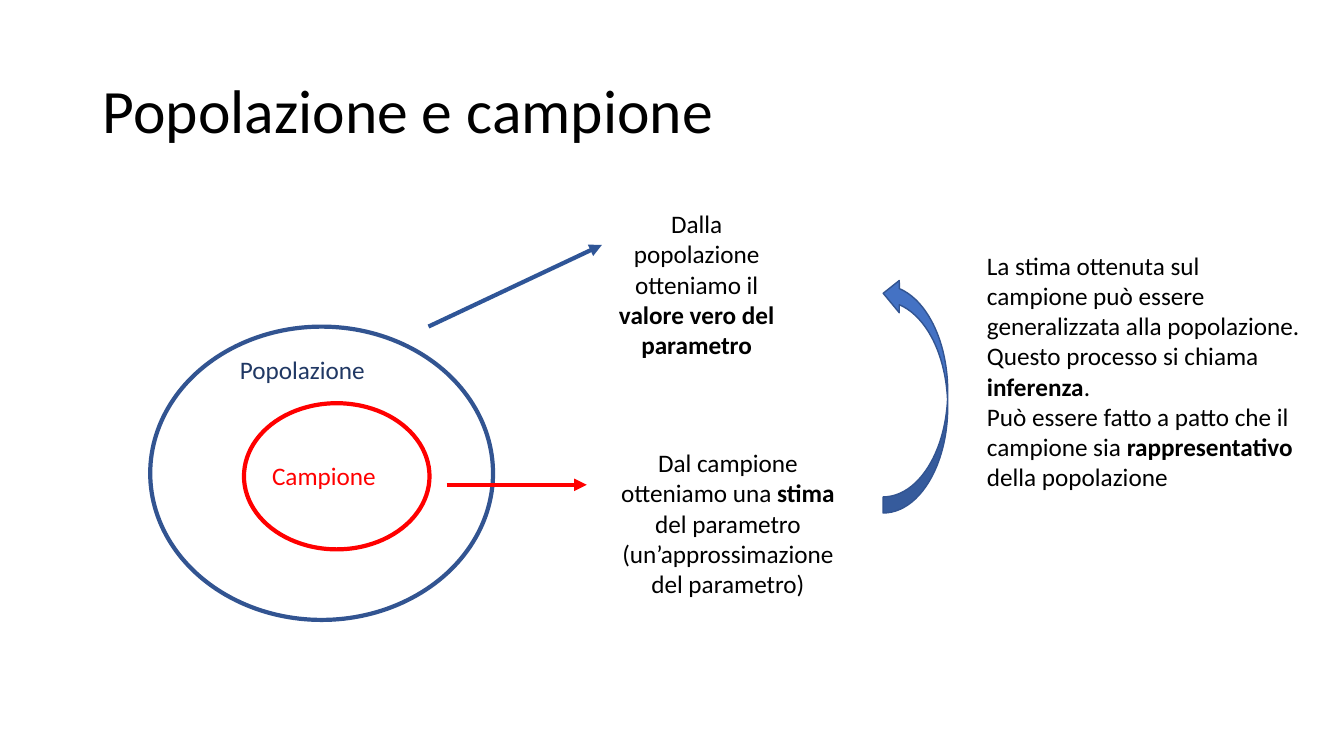
import pptx
import pptx.util
import pptx.dml.color
import pptx.enum.shapes
import pptx.enum.text
import pptx.oxml.ns
from dataclasses import dataclass
from lxml import etree
from pptx.util import Inches

SHAPE = pptx.enum.shapes.MSO_SHAPE
ALIGN = pptx.enum.text.PP_ALIGN
ANCHOR = pptx.enum.text.MSO_ANCHOR


@dataclass(frozen=True)
class Theme:
    font: str = "Calibri"
    title_size: int = 44
    body_size: int = 18
    text: str = "000000"
    population: str = "325491"
    population_text: str = "203864"
    population_arrow: str = "2F5597"
    sample: str = "FF0000"
    inference: str = "4472C4"
    line: float = 3
    thin_line: float = 1


THEME = Theme()


def rgb(value):
    return pptx.dml.color.RGBColor.from_string(value)


def add_text(slide, box, paragraphs, size=THEME.body_size, color=THEME.text,
             align=ALIGN.LEFT, anchor=ANCHOR.TOP, spacing=1.0):
    """Each paragraph is a list of (text, bold) runs."""
    tf = slide.shapes.add_textbox(*map(Inches, box)).text_frame
    tf.word_wrap = True
    tf.vertical_anchor = anchor
    for i, runs in enumerate(paragraphs):
        p = tf.add_paragraph() if i else tf.paragraphs[0]
        p.alignment = align
        p.line_spacing = spacing
        for text, bold in runs:
            r = p.add_run()
            r.text = text
            r.font.name = THEME.font
            r.font.size = pptx.util.Pt(size)
            r.font.bold = bold
            r.font.color.rgb = rgb(color)


def add_outlined(slide, kind, box, line, width, fill=None):
    sp = slide.shapes.add_shape(kind, *map(Inches, box))
    sp.shadow.inherit = False
    if fill:
        sp.fill.solid()
        sp.fill.fore_color.rgb = rgb(fill)
    else:
        sp.fill.background()
    sp.line.color.rgb = rgb(line)
    sp.line.width = pptx.util.Pt(width)
    return sp


def add_arrow(slide, start, end, color):
    cxn = slide.shapes.add_connector(
        pptx.enum.shapes.MSO_CONNECTOR.STRAIGHT, *map(Inches, start + end))
    cxn.line.color.rgb = rgb(color)
    cxn.line.width = pptx.util.Pt(THEME.line)
    qn = pptx.oxml.ns.qn
    etree.SubElement(cxn.line._get_or_add_ln(), qn("a:tailEnd"), type="triangle")
    etree.SubElement(cxn._element.spPr, qn("a:effectLst"))


def add_title(slide, box):
    add_text(slide, box, [[("Popolazione e campione", False)]],
             size=THEME.title_size, anchor=ANCHOR.MIDDLE, spacing=0.9)


def add_sets(slide, box):
    """Sample ellipse inside the population ellipse, with labels and arrows."""
    x, y, w, h = box
    label_w, label_h = 1.84, 0.4
    add_outlined(slide, SHAPE.OVAL, box, THEME.population, THEME.line)
    add_outlined(slide, SHAPE.OVAL, (x + 0.93, y + 0.76, 1.84, 1.45),
                 THEME.sample, THEME.line)
    add_text(slide, (x + 0.79, y + 0.23, label_w, label_h),
             [[("Popolazione", False)]], color=THEME.population_text)
    add_text(slide, (x + 1.11, y + 1.28, label_w, label_h),
             [[("Campione", False)]], color=THEME.sample)
    # Arrows towards the two results
    add_arrow(slide, (x + 2.76, y), (x + 4.48, y - 0.81), THEME.population_arrow)
    add_arrow(slide, (x + 2.94, y + 1.57), (x + 4.33, y + 1.57), THEME.sample)


def add_results(slide, box):
    """True value above, estimate below."""
    x, y, w, h = box
    add_text(slide, (x, y, 1.82, 1.64), [
        [("Dalla popolazione otteniamo il ", False),
         ("valore vero del parametro", True)],
    ], align=ALIGN.CENTER)
    add_text(slide, (x, y + 2.37, w, h - 2.37), [
        [("Dal campione otteniamo una ", False), ("stima ", True),
         ("del parametro (un’approssimazione", False)],
        [("del parametro)", False)],
    ], align=ALIGN.CENTER)


def add_inference(slide, box):
    """Curved arrow back to the true value, with its explanation."""
    x, y, w, h = box
    sp = add_outlined(slide, SHAPE.CURVED_LEFT_ARROW, (x, y + 0.32, 0.64, 2.34),
                      THEME.population, THEME.thin_line, THEME.inference)
    sp._element.spPr.xfrm.set("flipV", "1")
    add_text(slide, (x + 0.93, y, w - 0.93, h), [
        [("La stima ottenuta sul campione può essere generalizzata alla "
          "popolazione. Questo processo si chiama ", False),
         ("inferenza", True), (".", False)],
        [("Può essere fatto a patto che il campione sia ", False),
         ("rappresentativo ", True), ("della popolazione", False)],
    ])


def main():
    prs = pptx.Presentation()
    prs.slide_width, prs.slide_height = Inches(13.33), Inches(7.5)
    slide = prs.slides.add_slide(prs.slide_layouts[6])
    add_title(slide, (0.92, 0.4, 11.5, 1.45))
    add_sets(slide, (1.49, 3.24, 3.4, 2.91))
    add_results(slide, (6, 2.02, 2.44, 3.99))
    add_inference(slide, (8.76, 2.43, 4.27, 2.52))
    prs.save("out.pptx")


if __name__ == "__main__":
    main()
